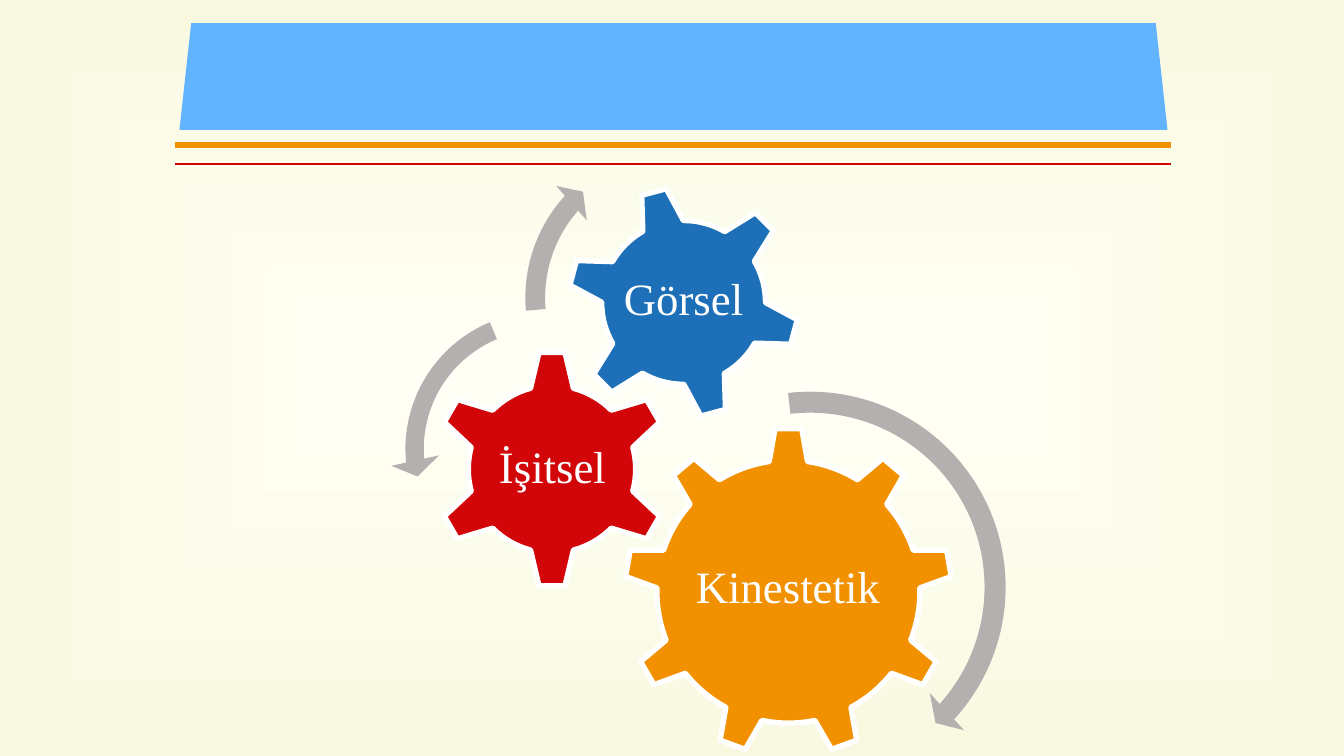
from dataclasses import dataclass

from lxml import etree
from pptx import Presentation
from pptx import util as u
from pptx.dml.color import RGBColor
from pptx.enum import shapes, text
from pptx.oxml import ns

PX = 9144  # EMU per px, 100 px to the inch
FONT = "Times New Roman"
COLORS = {
    "glow": "FFFFF5",
    "edge": "F9F9E2",
    "banner": "62B4FF",
    "blue": "1D70B7",
    "orange": "F29100",
    "red": "D20509",
    "gray": "B3B1B0",
    "white": "FFFFFF",
}
Box = tuple[int, int, int, int]


@dataclass
class Rule:
    y: int
    color: str
    points: float


@dataclass
class Gear:
    label: str
    kind: shapes.MSO_SHAPE
    box: Box
    label_box: Box
    color: str
    rotation: float = 0


@dataclass
class Arrow:
    kind: shapes.MSO_SHAPE
    box: Box
    adjustments: tuple[float, ...]


RULES = [Rule(144, "orange", 4.5), Rule(163, "red", 1.5)]
GEARS = [
    Gear("Kinestetik", shapes.MSO_SHAPE.GEAR_9, (619, 424, 326, 326),
         (684, 500, 195, 168), "orange"),
    Gear("İşitsel", shapes.MSO_SHAPE.GEAR_6, (429, 347, 237, 237),
         (489, 407, 118, 117), "red"),
    Gear("Görsel", shapes.MSO_SHAPE.GEAR_6, (562, 184, 232, 232),
         (613, 234, 130, 130), "blue", 345),
]
ARROWS = [
    Arrow(shapes.MSO_SHAPE.CIRCULAR_ARROW, (595, 374, 417, 417),
          (0.05, 2.99, 25.39, 158.12, 0.06)),
    Arrow(shapes.MSO_SHAPE.LEFT_CIRCULAR_ARROW, (387, 294, 303, 303),
          (0.06, 4.3, 104.89, 148.38, 0.08)),
    Arrow(shapes.MSO_SHAPE.CIRCULAR_ARROW, (508, 132, 327, 327),
          (0.06, 3.94, 133.14, 105.08, 0.07)),
]


def rgb(name: str) -> RGBColor:
    return RGBColor.from_string(COLORS[name])


def emu(box: Box) -> list[int]:
    return [length * PX for length in box]


def paint_background(slide) -> None:
    fill = slide.background.fill
    fill.gradient()
    for stop, name in zip(fill.gradient_stops, ("glow", "edge")):
        stop.color.rgb = rgb(name)
    # Rectangular gradient spreading from the centre
    linear = slide.background._cSld.find(".//" + ns.qn("a:lin"))
    spread = etree.Element(ns.qn("a:path"), {"path": "rect"})
    etree.SubElement(spread, ns.qn("a:fillToRect"),
                     {side: "50000" for side in "ltrb"})
    linear.getparent().replace(linear, spread)


def add_filled(slide, kind: shapes.MSO_SHAPE, box: Box, color: str):
    figure = slide.shapes.add_shape(kind, *emu(box))
    figure.shadow.inherit = False
    figure.fill.solid()
    figure.fill.fore_color.rgb = rgb(color)
    figure.line.fill.background()
    return figure


def add_rule(slide, rule: Rule) -> None:
    line = slide.shapes.add_connector(
        shapes.MSO_CONNECTOR.STRAIGHT, *emu((1161, rule.y, 174, rule.y)))
    line.line.color.rgb = rgb(rule.color)
    line.line.width = u.Pt(rule.points)
    etree.SubElement(line._element.spPr, ns.qn("a:effectLst"))


def add_gear(slide, gear: Gear) -> None:
    wheel = add_filled(slide, gear.kind, gear.box, gear.color)
    wheel.rotation = gear.rotation
    wheel.line.color.rgb = rgb("white")
    wheel.line.width = u.Pt(3.78)

    frame = slide.shapes.add_textbox(*emu(gear.label_box)).text_frame
    frame.word_wrap = True
    frame.vertical_anchor = text.MSO_ANCHOR.MIDDLE
    frame.margin_left = frame.margin_right = 4 * PX
    frame.margin_top = frame.margin_bottom = 4 * PX
    paragraph = frame.paragraphs[0]
    paragraph.alignment = text.PP_ALIGN.CENTER
    paragraph.line_spacing = 0.9
    run = paragraph.add_run()
    run.text = gear.label
    run.font.name = FONT
    run.font.size = u.Pt(32)
    run.font.color.rgb = rgb("white")


def add_arrow(slide, arrow: Arrow) -> None:
    curve = add_filled(slide, arrow.kind, arrow.box, "gray")
    for index, value in enumerate(arrow.adjustments):
        curve.adjustments[index] = value


def main() -> None:
    prs = Presentation()
    prs.slide_width, prs.slide_height = 1333 * PX, 750 * PX
    slide = prs.slides.add_slide(prs.slide_layouts[6])
    paint_background(slide)

    # Header: rules and banner
    for rule in RULES:
        add_rule(slide, rule)
    banner = add_filled(slide, shapes.MSO_SHAPE.TRAPEZOID,
                        (178, 23, 980, 106), "banner")
    banner.adjustments[0] = 0.11

    # Learning styles: gears and turning arrows
    for gear in GEARS:
        add_gear(slide, gear)
    for arrow in ARROWS:
        add_arrow(slide, arrow)

    prs.save("out.pptx")


if __name__ == "__main__":
    main()
